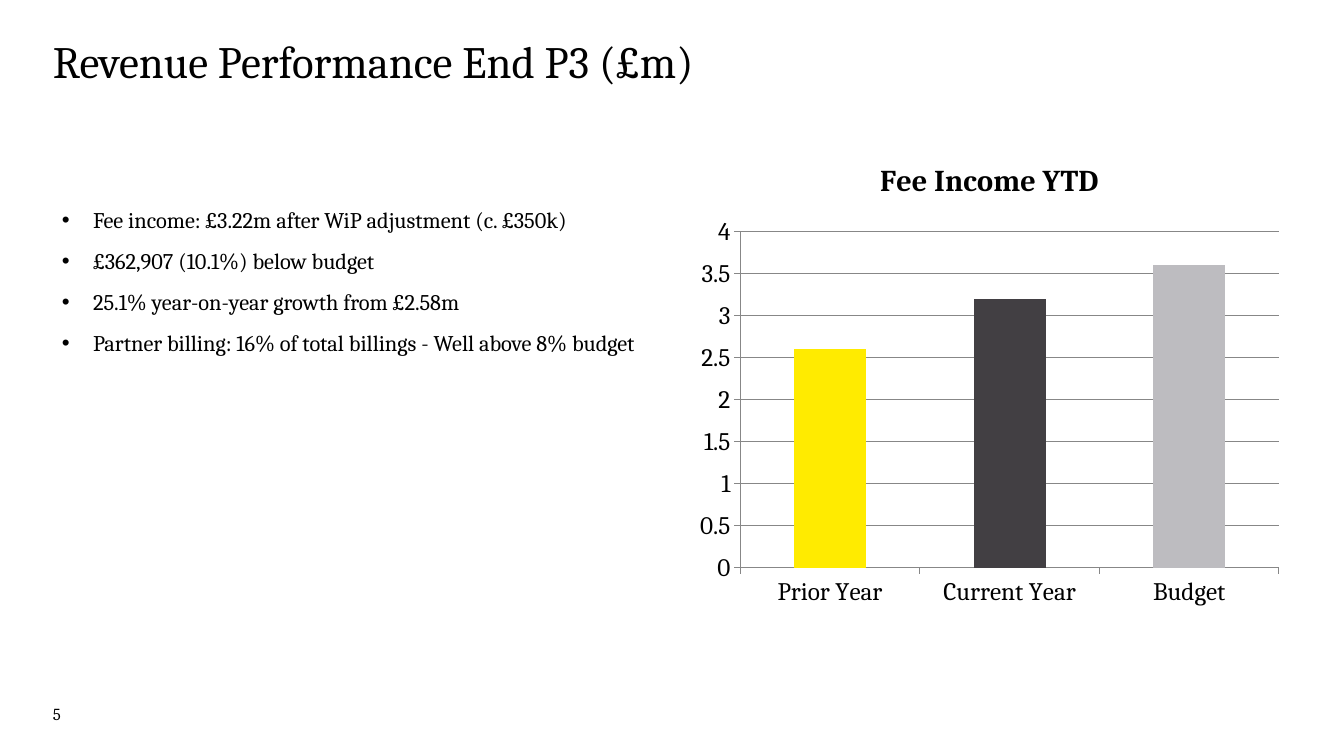
from dataclasses import dataclass

from lxml.etree import SubElement
from pptx import Presentation
from pptx.chart.data import CategoryChartData
from pptx.dml.color import RGBColor as Rgb
from pptx.enum.chart import XL_CHART_TYPE as ChartType, XL_TICK_MARK as TickMark
from pptx.oxml.ns import qn
from pptx.util import Inches, Pt

WIDTH, HEIGHT = Inches(13.33), Inches(7.5)
LEFT, CONTENT = 3.94, 92.12
PANEL_WIDTH, PANEL_HEIGHT = 44.86, 63.07
INDENT = Inches(0.31)


@dataclass(frozen=True)
class Theme:
    """Colours, font and type sizes of the slide."""
    font: str = "Cambria"
    ink: str = "000000"
    grid: str = "878787"
    bars: tuple = ("FFEB00", "423F43", "BDBCC0")
    title: float = 32
    body: float = 16
    number: float = 12
    chart: float = 18
    chart_title: float = 21.6


THEME = Theme()


def to_lengths(area):
    """Turn left, top, width and height in percent of the slide into lengths."""
    return [round(side * share / 100)
            for side, share in zip((WIDTH, HEIGHT) * 2, area)]


def style_font(font, size, bold=False):
    """Apply the theme typeface and ink at a given size."""
    font.name, font.size, font.bold = THEME.font, Pt(size), bold
    font.color.rgb = Rgb.from_string(THEME.ink)


def add_bullet(para):
    """Give a paragraph a hanging bullet."""
    props = para._p.get_or_add_pPr()
    props.set("marL", str(INDENT))
    props.set("indent", str(-INDENT))
    SubElement(props, qn("a:buFont")).set("typeface", "Arial")
    SubElement(props, qn("a:buChar")).set("char", "•")


def add_text(page, lines, area, size, bullets=False, gap=0, leading=1.0):
    """Place a text box without insets, one paragraph per line."""
    box = page.shapes.add_textbox(*to_lengths(area))
    frame = box.text_frame
    frame.word_wrap = True
    frame.margin_left = frame.margin_right = 0
    frame.margin_top = frame.margin_bottom = 0
    for index, line in enumerate(lines):
        para = frame.add_paragraph() if index else frame.paragraphs[0]
        if bullets:
            add_bullet(para)
        para.line_spacing = leading
        para.space_before = Pt(gap if index else 0)
        span = para.add_run()
        span.text = line
        style_font(span.font, size)


def style_line(line):
    """Draw a thin grey chart line."""
    line.color.rgb = Rgb.from_string(THEME.grid)
    line.width = Pt(0.75)


def add_columns(page, title, values, area):
    """Place a column chart with one colour per category."""
    data = CategoryChartData()
    data.categories = list(values)
    data.add_series("Series 1", list(values.values()))
    chart = page.shapes.add_chart(
        ChartType.COLUMN_CLUSTERED, *to_lengths(area), data).chart
    style_font(chart.font, THEME.chart)
    chart.has_legend = False
    chart.has_title = True
    heading = chart.chart_title.text_frame
    heading.text = title
    style_font(heading.paragraphs[0].runs[0].font, THEME.chart_title, bold=True)
    for axis in (chart.category_axis, chart.value_axis):
        axis.major_tick_mark = TickMark.OUTSIDE
        axis.minor_tick_mark = TickMark.NONE
        style_line(axis.format.line)
    scale = chart.value_axis
    scale.minimum_scale, scale.maximum_scale, scale.major_unit = 0, 4, 0.5
    scale.tick_labels.number_format = "General"
    scale.tick_labels.number_format_is_linked = False
    style_line(scale.major_gridlines.format.line)
    plot = chart.plots[0]
    plot.gap_width = 150
    plot.vary_by_categories = False
    for index, colour in enumerate(THEME.bars):
        fill = plot.series[0].points[index].format.fill
        fill.solid()
        fill.fore_color.rgb = Rgb.from_string(colour)


def main():
    """Build the revenue slide and save the deck."""
    deck = Presentation()
    deck.slide_width, deck.slide_height = WIDTH, HEIGHT
    page = deck.slides.add_slide(deck.slide_layouts[6])
    add_text(page, ["Revenue Performance End P3 (£m)"],
             (LEFT, 5.25, CONTENT, 15.6), THEME.title, leading=0.9)
    add_text(page, [
        "Fee income: £3.22m after WiP adjustment (c. £350k)",
        "£362,907 (10.1%) below budget",
        "25.1% year-on-year growth from £2.58m",
        "Partner billing: 16% of total billings - Well above 8% budget",
    ], (4.6, 27.33, PANEL_WIDTH, PANEL_HEIGHT), THEME.body, bullets=True, gap=10)
    add_text(page, ["5"], (LEFT, 93.07, 3.53, 5.33), THEME.number)
    add_columns(page, "Fee Income YTD",
                {"Prior Year": 2.6, "Current Year": 3.2, "Budget": 3.6},
                (LEFT + CONTENT - PANEL_WIDTH, 18.5, PANEL_WIDTH, PANEL_HEIGHT))
    deck.save("out.pptx")


if __name__ == "__main__":
    main()
